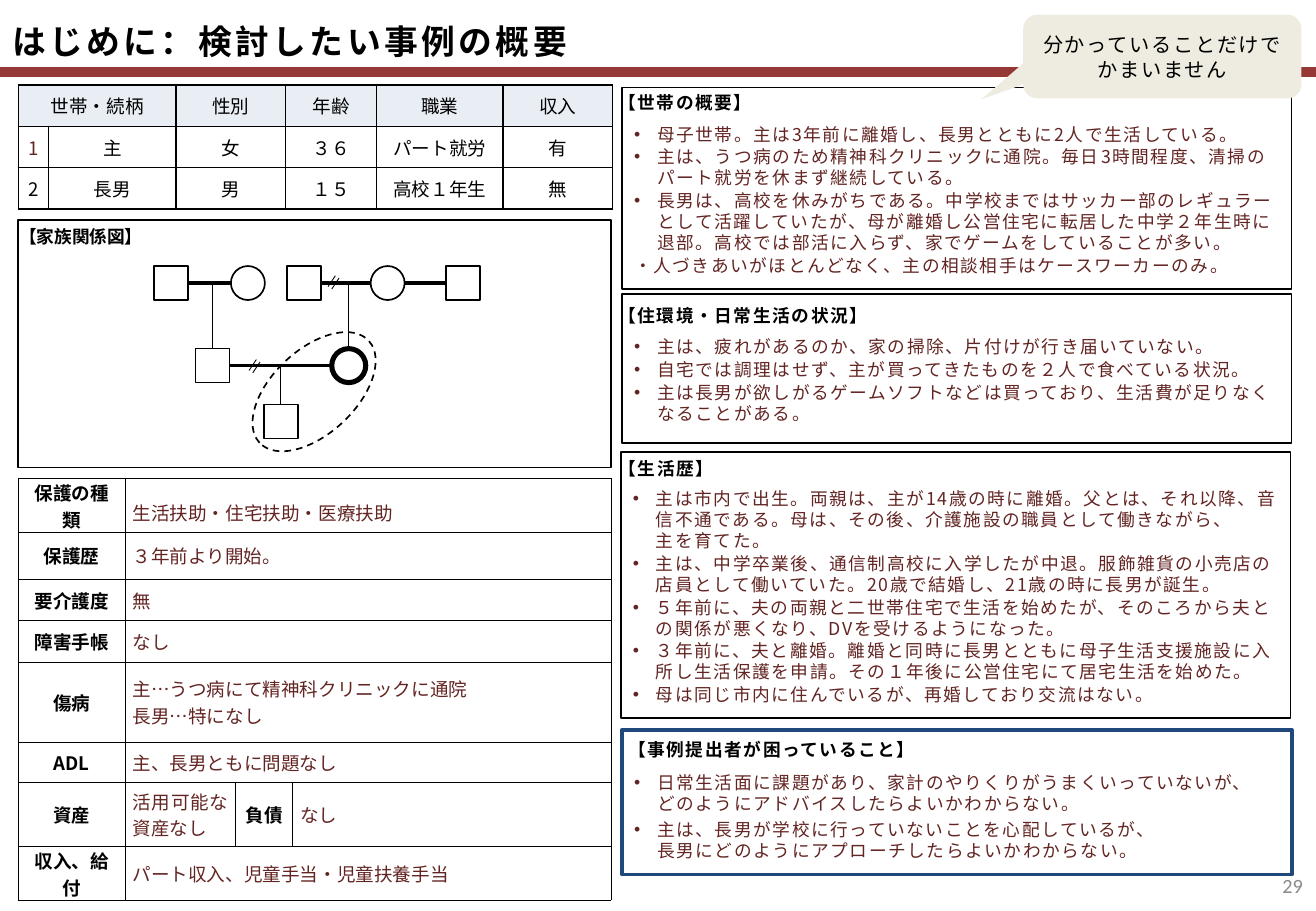
import pptx
import pptx.util
import pptx.oxml
import pptx.oxml.ns
from lxml import etree
from pptx.dml.color import RGBColor
from pptx.enum.dml import MSO_LINE
from pptx.enum.shapes import MSO_CONNECTOR, MSO_SHAPE
from pptx.enum.text import MSO_ANCHOR, MSO_AUTO_SIZE, PP_ALIGN
from pptx.util import Inches

JP = "Noto Sans CJK JP"
BLACK = RGBColor(0x00, 0x00, 0x00)
WINE = RGBColor(0x63, 0x25, 0x23)
RED = RGBColor(0x95, 0x37, 0x35)
NAVY = RGBColor(0x1F, 0x49, 0x7D)
GREY = RGBColor(0x89, 0x89, 0x89)
HEADER = RGBColor(0xE9, 0xED, 0xF4)
CREAM = RGBColor(0xEE, 0xEC, 0xE1)
SYMBOL = 0.28

HOUSEHOLD = [
    ["世帯・続柄", "", "性別", "年齢", "職業", "収入"],
    ["1", "主", "女", "３６", "パート就労", "有"],
    ["2", "長男", "男", "１５", "高校１年生", "無"],
]
SUPPORT = [
    (0.44, ["保護の種類", "生活扶助・住宅扶助・医療扶助"]),
    (0.39, ["保護歴", "３年前より開始。"]),
    (0.34, ["要介護度", "無"]),
    (0.34, ["障害手帳", "なし"]),
    (0.66, ["傷病", "主…うつ病にて精神科クリニックに通院\n長男…特になし"]),
    (0.33, ["ADL", "主、長男ともに問題なし"]),
    (0.53, ["資産", "活用可能な資産なし", "負債", "なし"]),
    (0.44, ["収入、給付", "パート収入、児童手当・児童扶養手当"]),
]
OVERVIEW = [
    "母子世帯。主は3年前に離婚し、長男とともに2人で生活している。",
    "主は、うつ病のため精神科クリニックに通院。毎日3時間程度、清掃のパート就労を休まず継続している。",
    "長男は、高校を休みがちである。中学校まではサッカー部のレギュラーとして活躍していたが、"
    "母が離婚し公営住宅に転居した中学２年生時に退部。高校では部活に入らず、家でゲームをしていることが多い。",
    "・人づきあいがほとんどなく、主の相談相手はケースワーカーのみ。",
]
LIVING = [
    "主は、疲れがあるのか、家の掃除、片付けが行き届いていない。",
    "自宅では調理はせず、主が買ってきたものを２人で食べている状況。",
    "主は長男が欲しがるゲームソフトなどは買っており、生活費が足りなくなることがある。",
]
HISTORY = [
    "主は市内で出生。両親は、主が14歳の時に離婚。父とは、それ以降、音信不通である。"
    "母は、その後、介護施設の職員として働きながら、\n主を育てた。",
    "主は、中学卒業後、通信制高校に入学したが中退。服飾雑貨の小売店の店員として働いていた。"
    "20歳で結婚し、21歳の時に長男が誕生。",
    "５年前に、夫の両親と二世帯住宅で生活を始めたが、そのころから夫との関係が悪くなり、DVを受けるようになった。",
    "３年前に、夫と離婚。離婚と同時に長男とともに母子生活支援施設に入所し生活保護を申請。"
    "その１年後に公営住宅にて居宅生活を始めた。",
    "母は同じ市内に住んでいるが、再婚しており交流はない。",
]
WORRIES = [
    "日常生活面に課題があり、家計のやりくりがうまくいっていないが、\nどのようにアドバイスしたらよいかわからない。",
    "主は、長男が学校に行っていないことを心配しているが、\n長男にどのようにアプローチしたらよいかわからない。",
]


def add_run(p, text, size, color=BLACK, bold=False, spacing=0, font=JP):
    r = p.add_run()
    r.text = text
    r.font.size = pptx.util.Pt(size)
    r.font.bold = bold
    r.font.color.rgb = color
    r.font.name = font
    rPr = r._r.get_or_add_rPr()
    if spacing:
        rPr.set("spc", str(spacing * 100))
    etree.SubElement(rPr, pptx.oxml.ns.qn("a:ea"), typeface=font)


def set_insets(tf, left, top, right, bottom):
    tf.margin_left, tf.margin_top = Inches(left), Inches(top)
    tf.margin_right, tf.margin_bottom = Inches(right), Inches(bottom)


def add_bullet(p):
    pPr = p._p.get_or_add_pPr()
    pPr.set("marL", str(Inches(0.19)))
    pPr.set("indent", str(-Inches(0.19)))
    etree.SubElement(pPr, pptx.oxml.ns.qn("a:buFont"), typeface="Arial")
    etree.SubElement(pPr, pptx.oxml.ns.qn("a:buChar"), char="•")


def add_outline(shapes, kind, x, y, w, h, width=1, color=BLACK):
    s = shapes.add_shape(kind, Inches(x), Inches(y), Inches(w), Inches(h))
    s.shadow.inherit = False
    s.fill.background()
    s.line.color.rgb = color
    s.line.width = pptx.util.Pt(width)
    return s


def add_line(shapes, start, end, width, color=BLACK, joined=None):
    """Draw a straight line; joined is an optional (shape, site) for its start."""
    c = shapes.add_connector(MSO_CONNECTOR.STRAIGHT, *[Inches(v) for v in start + end])
    c.line.color.rgb = color
    c.line.width = pptx.util.Pt(width)
    etree.SubElement(c._element.spPr, pptx.oxml.ns.qn("a:effectLst"))
    if joined:
        c.begin_connect(*joined)


def add_label(shapes, text, x, y, w, spacing=1):
    s = shapes.add_textbox(Inches(x), Inches(y), Inches(w), Inches(0.18))
    tf = s.text_frame
    tf.word_wrap = False
    set_insets(tf, 0, 0, 0, 0)
    p = tf.paragraphs[0]
    p.line_spacing = pptx.util.Pt(12.5)
    add_run(p, text, 10.5, bold=True, spacing=spacing)


def add_panel(shapes, x, y, h, items, before=1, top=0.24, width=1, color=BLACK):
    s = add_outline(shapes, MSO_SHAPE.RECTANGLE, x, y, 5.51, h, width, color)
    tf = s.text_frame
    tf.word_wrap = True
    tf.vertical_anchor = MSO_ANCHOR.MIDDLE
    set_insets(tf, 0.1, top, 0.1, 0.05)
    for i, item in enumerate(items):
        p = tf.add_paragraph() if i else tf.paragraphs[0]
        p.alignment = PP_ALIGN.LEFT
        p.line_spacing = pptx.util.Pt(12.5)
        p.space_before = pptx.util.Pt(before)
        if not item.startswith("・"):
            add_bullet(p)
        for j, part in enumerate(item.split("\n")):
            if j:
                p.add_line_break()
            add_run(p, part, 10.5, WINE, spacing=1)


def add_grid(shapes, x, y, cols, rows, border):
    """Add a plain table with black borders on every cell."""
    frame = shapes.add_table(len(rows), len(cols), Inches(x), Inches(y),
                             Inches(sum(cols)), Inches(sum(rows)))
    table = frame.table
    table.first_row = table.horz_banding = False
    for col, w in zip(table.columns, cols):
        col.width = Inches(w)
    for row, h in zip(table.rows, rows):
        row.height = Inches(h)
    for cell in table.iter_cells():
        tcPr = cell._tc.get_or_add_tcPr()
        for side in ("a:lnL", "a:lnR", "a:lnT", "a:lnB"):
            ln = etree.SubElement(tcPr, pptx.oxml.ns.qn(side), w=str(pptx.util.Pt(border)))
            fill = etree.SubElement(ln, pptx.oxml.ns.qn("a:solidFill"))
            etree.SubElement(fill, pptx.oxml.ns.qn("a:srgbClr"), val=str(BLACK))
        cell.fill.background()
    return table


def fill_cell(cell, text, inset, align=PP_ALIGN.CENTER, color=BLACK, bold=False):
    cell.vertical_anchor = MSO_ANCHOR.MIDDLE
    set_insets(cell, inset, 0, inset, 0)
    for i, part in enumerate(text.split("\n")):
        p = cell.text_frame.add_paragraph() if i else cell.text_frame.paragraphs[0]
        p.alignment = align
        add_run(p, part, 11, color, bold)


def add_household_table(shapes):
    table = add_grid(shapes, 0.15, 0.7, [0.25, 1.05, 0.9, 0.75, 1.04, 0.9], [0.34] * 3, 1)
    table.cell(0, 0).merge(table.cell(0, 1))
    for i, row in enumerate(HOUSEHOLD):
        for j, text in enumerate(row):
            cell = table.cell(i, j)
            if text:
                fill_cell(cell, text, 0.07, color=WINE if text == "1" else BLACK)
            if i == 0:
                cell.fill.solid()
                cell.fill.fore_color.rgb = HEADER


def add_support_table(shapes):
    table = add_grid(shapes, 0.15, 3.94, [0.88, 0.91, 0.47, 2.62], [h for h, _ in SUPPORT], 0.5)
    for i, (_, texts) in enumerate(SUPPORT):
        if len(texts) == 2:
            table.cell(i, 1).merge(table.cell(i, 3))
        for j, text in enumerate(texts):
            if j % 2:
                fill_cell(table.cell(i, j), text, 0.06, PP_ALIGN.JUSTIFY, WINE)
            else:
                fill_cell(table.cell(i, j), text, 0.06, bold=True)
    table.cell(0, 1).text_frame.paragraphs[0].line_spacing = 1.5


def add_family_diagram(shapes):
    g = shapes.add_group_shape().shapes

    def man(x, y):
        return add_outline(g, MSO_SHAPE.RECTANGLE, x, y, SYMBOL, SYMBOL)

    def woman(x, y, width=1):
        return add_outline(g, MSO_SHAPE.OVAL, x, y, SYMBOL, SYMBOL, width)

    fathers_father, mothers_father, stepfather = [man(x, 2.19) for x in (1.27, 2.36, 3.67)]
    father, son = man(1.61, 2.87), man(2.17, 3.33)
    woman(1.9, 2.19)
    woman(3.05, 2.19)
    woman(2.73, 2.87, 3)
    for person, site, start, end, width in [
        (fathers_father, 3, (1.55, 2.33), (1.9, 2.33), 2),
        (mothers_father, 3, (2.64, 2.33), (3.05, 2.33), 2),
        (stepfather, 1, (3.67, 2.33), (3.33, 2.33), 2),
        (father, 3, (1.89, 3.01), (2.73, 3.01), 2),
        (father, 0, (1.75, 2.87), (1.75, 2.34), 0.5),
        (son, 0, (2.31, 3.33), (2.31, 3.01), 0.5),
    ]:
        add_line(g, start, end, width, joined=(person, site))
    add_line(g, (2.87, 2.87), (2.87, 2.35), 0.5)
    for x, y in [(2.76, 2.27), (2.11, 2.96)]:  # divorce marks
        for dx, dy in [(0, 0), (0.03, 0.02)]:
            add_line(g, (x + dx, y + dy), (x + dx - 0.06, y + dy + 0.09), 0.5)
    home = add_outline(g, MSO_SHAPE.OVAL, 1.97, 2.88, 1.23, 0.69)
    home.rotation = 316.8
    home.line.dash_style = MSO_LINE.DASH


def add_callout(shapes):
    s = add_outline(shapes, MSO_SHAPE.ROUNDED_RECTANGULAR_CALLOUT, 8.42, 0.12, 2.29, 0.69)
    for i, value in enumerate((-0.65, 0.51, 0.17)):
        s.adjustments[i] = value
    s.fill.solid()
    s.fill.fore_color.rgb = CREAM
    s.line.fill.background()
    tf = s.text_frame
    tf.word_wrap = True
    tf.vertical_anchor = MSO_ANCHOR.MIDDLE
    for i, text in enumerate(["分かっていることだけで", "かまいません"]):
        p = tf.add_paragraph() if i else tf.paragraphs[0]
        p.alignment = PP_ALIGN.CENTER
        p.line_spacing = pptx.util.Pt(14.8)
        add_run(p, text, 12, spacing=1)


def format_title(s, text):
    s.left, s.top, s.width, s.height = Inches(0), Inches(0), Inches(10.54), Inches(0.59)
    tf = s.text_frame
    tf.auto_size = MSO_AUTO_SIZE.NONE
    tf.vertical_anchor = MSO_ANCHOR.MIDDLE
    set_insets(tf, 0.1, 0.08, 0.1, 0)
    tf.paragraphs[0].alignment = PP_ALIGN.LEFT
    add_run(tf.paragraphs[0], text, 20, bold=True, spacing=2)


def add_page_number(shapes, text):
    tf = shapes.add_textbox(Inches(10.37), Inches(7.09), Inches(0.45), Inches(0.4)).text_frame
    tf.word_wrap = True
    tf.vertical_anchor = MSO_ANCHOR.MIDDLE
    tf.paragraphs[0].alignment = PP_ALIGN.RIGHT
    add_run(tf.paragraphs[0], text, 12, GREY, font="Calibri")


def main():
    prs = pptx.Presentation()
    prs.slide_width, prs.slide_height = Inches(10.83), Inches(7.5)
    shapes = prs.slides.add_slide(prs.slide_layouts[5]).shapes
    add_line(shapes, (0, 0.59), (10.83, 0.59), 6, RED)
    format_title(shapes.title, "はじめに：検討したい事例の概要")
    add_page_number(shapes, "29")
    add_household_table(shapes)
    add_support_table(shapes)
    add_outline(shapes, MSO_SHAPE.RECTANGLE, 0.15, 1.81, 4.88, 2.04)
    add_label(shapes, "【家族関係図】", 0.16, 1.86, 1.03, spacing=0)
    add_panel(shapes, 5.12, 0.72, 1.66, OVERVIEW)
    add_label(shapes, "【世帯の概要】", 5.09, 0.76, 1.13)
    add_panel(shapes, 5.12, 2.42, 1.23, LIVING)
    add_label(shapes, "【住環境・日常生活の状況】", 5.09, 2.51, 2.1)
    add_panel(shapes, 5.11, 3.72, 2.19, HISTORY)
    add_label(shapes, "【生活歴】", 5.09, 3.77, 0.81)
    add_panel(shapes, 5.12, 6.01, 1.19, WORRIES, before=3, top=0.28, width=2.25, color=NAVY)
    add_label(shapes, "【事例提出者が困っていること】", 5.17, 6.08, 2.42)
    add_callout(shapes)
    add_family_diagram(shapes)
    prs.save("out.pptx")


if __name__ == "__main__":
    main()
